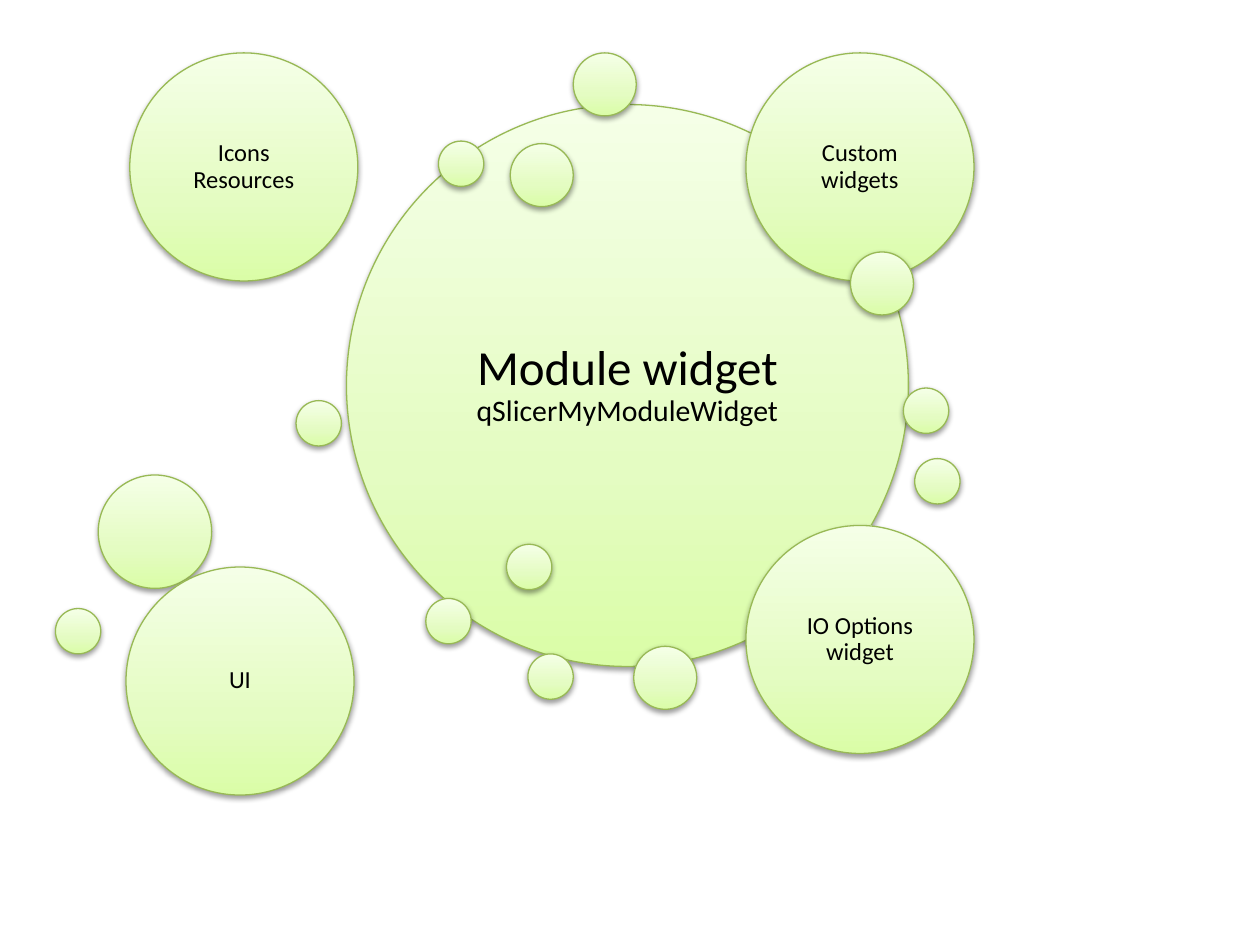
from dataclasses import dataclass
from typing import NamedTuple

from lxml.etree import SubElement
from pptx import Presentation
from pptx.dml.color import RGBColor
from pptx.enum.shapes import MSO_SHAPE as Shape
from pptx.enum.text import MSO_ANCHOR as Anchor, PP_ALIGN as Align
from pptx.oxml import parse_xml
from pptx.oxml.ns import nsdecls, qn
from pptx.util import Inches, Pt


@dataclass(frozen=True)
class Theme:
    font: str = "Calibri"
    text: RGBColor = RGBColor(0x00, 0x00, 0x00)
    outline: RGBColor = RGBColor(0x98, 0xB9, 0x55)
    outline_width: float = 0.75
    gradient: tuple = ((0, "DAFDA7"), (35, "E4FCC2"), (100, "F5FFE7"))
    shadow: str = "000000"
    title_size: int = 28
    subtitle_size: int = 17
    label_size: int = 14
    line_spacing: float = 0.9


class Line(NamedTuple):
    text: str
    size: int


@dataclass(frozen=True)
class Bubble:
    left: float
    top: float
    diameter: float
    lines: tuple[Line, ...] = ()
    inset: float = 0.06


THEME = Theme()
HUB, TOPIC, MEDIUM, SMALL, DOT = 4.46, 1.81, 0.9, 0.5, 0.36


def label(*texts: str) -> tuple[Line, ...]:
    return tuple(Line(text, THEME.label_size) for text in texts)


BUBBLES = (
    Bubble(2.75, 0.83, HUB, (
        Line("Module widget", THEME.title_size),
        Line("qSlicerMyModuleWidget", THEME.subtitle_size),
    ), inset=0.12),
    Bubble(4.55, 0.42, SMALL),
    Bubble(3.38, 4.75, DOT),
    Bubble(7.17, 3.08, DOT),
    Bubble(5.03, 5.13, SMALL),
    Bubble(3.48, 1.12, DOT),
    Bubble(2.35, 3.18, DOT),
    Bubble(1.03, 0.42, TOPIC, label("Icons", "Resources")),
    Bubble(4.05, 1.14, SMALL),
    Bubble(0.78, 3.77, MEDIUM),
    Bubble(5.92, 0.42, TOPIC, label("Custom widgets")),
    Bubble(6.75, 2, SMALL),
    Bubble(0.44, 4.83, DOT),
    Bubble(4.02, 4.32, DOT),
    Bubble(1, 4.5, TOPIC, label("UI")),
    Bubble(7.26, 3.64, DOT),
    Bubble(5.92, 4.17, TOPIC, label("IO Options widget")),
    Bubble(4.19, 5.19, DOT),
)


def set_gradient(sp) -> None:
    stops = "".join(
        f'<a:gs pos="{pos * 1000}"><a:srgbClr val="{color}"/></a:gs>'
        for pos, color in THEME.gradient
    )
    fill = parse_xml(
        f'<a:gradFill {nsdecls("a")} rotWithShape="1"><a:gsLst>{stops}</a:gsLst>'
        '<a:lin ang="16200000" scaled="0"/></a:gradFill>'
    )
    sp.fill.background()
    sp_pr = sp.element.spPr
    sp_pr.replace(sp_pr.find(qn("a:noFill")), fill)


def set_shadow(sp) -> None:
    sp.shadow.inherit = False
    effects = sp.element.spPr.find(qn("a:effectLst"))
    shadow = SubElement(effects, qn("a:outerShdw"), blurRad=str(Pt(3.1)),
                        dist=str(Pt(1.6)), dir="5400000", rotWithShape="0")
    color = SubElement(shadow, qn("a:srgbClr"), val=THEME.shadow)
    SubElement(color, qn("a:alpha"), val="38000")


def write_lines(sp, bubble: Bubble) -> None:
    tf = sp.text_frame
    tf.word_wrap = True
    tf.vertical_anchor = Anchor.MIDDLE
    tf.margin_left = tf.margin_right = Inches(bubble.inset)
    tf.margin_top = tf.margin_bottom = Inches(bubble.inset)
    p = tf.paragraphs[0]
    p.alignment = Align.CENTER
    p.line_spacing = THEME.line_spacing
    p.font.name = THEME.font
    p.font.color.rgb = THEME.text
    for i, line in enumerate(bubble.lines):
        if i:
            p.add_line_break()
        r = p.add_run()
        r.text = line.text
        r.font.size = Pt(line.size)


def draw_bubble(slide, bubble: Bubble) -> None:
    size = Inches(bubble.diameter)
    sp = slide.shapes.add_shape(
        Shape.OVAL, Inches(bubble.left), Inches(bubble.top), size, size)
    set_gradient(sp)
    sp.line.color.rgb = THEME.outline
    sp.line.width = Pt(THEME.outline_width)
    set_shadow(sp)
    if bubble.lines:
        write_lines(sp, bubble)


def main() -> None:
    prs = Presentation()
    prs.slide_width, prs.slide_height = Inches(10), Inches(7.5)
    slide = prs.slides.add_slide(prs.slide_layouts[6])
    for bubble in BUBBLES:
        draw_bubble(slide, bubble)
    prs.save("out.pptx")


if __name__ == "__main__":
    main()
